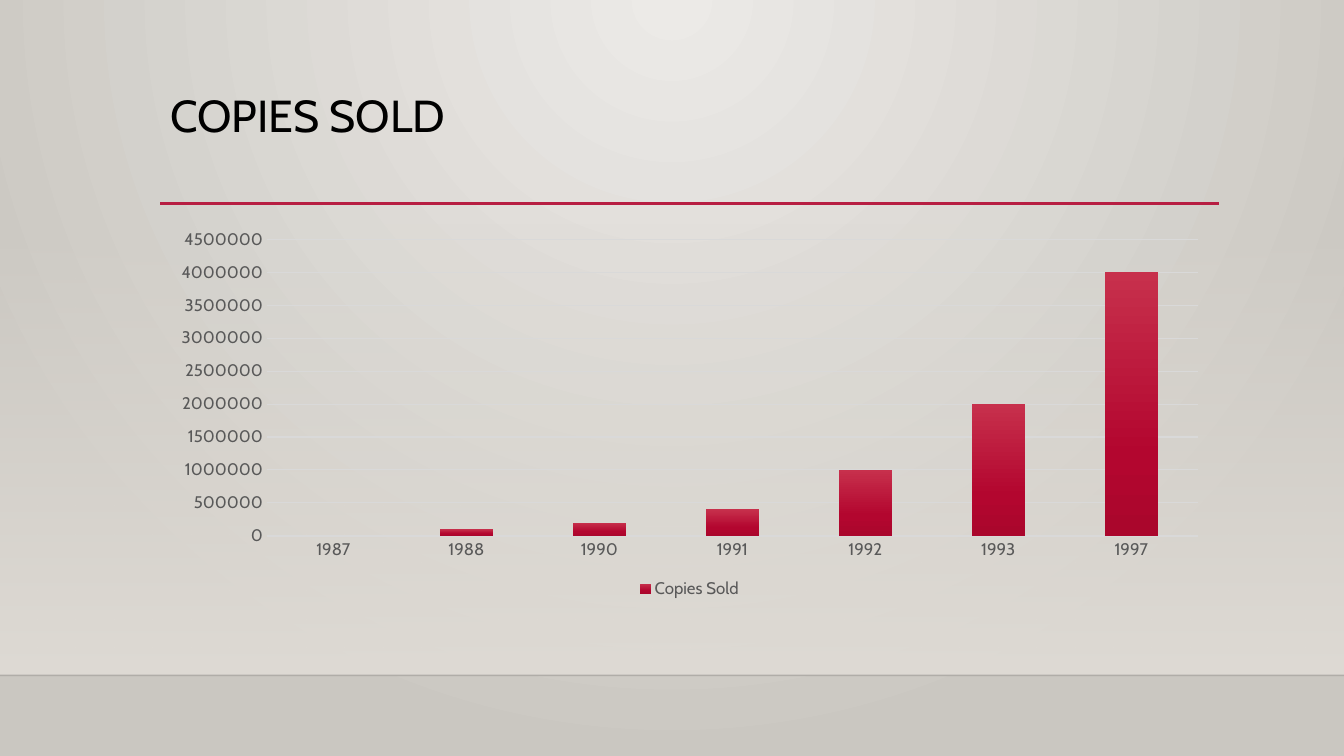
from lxml import etree
from pptx import Presentation, util as u
from pptx.chart.data import CategoryChartData
from pptx.dml.color import RGBColor
from pptx.enum import chart as ch, shapes, text
from pptx.oxml import ns, parse_xml

FONT = "Cabin"
BLACK = RGBColor(0x00, 0x00, 0x00)
GREY_TEXT = RGBColor(0x59, 0x59, 0x59)
GRID_GREY = RGBColor(0xD9, 0xD9, 0xD9)
CRIMSON = RGBColor(0xB7, 0x1E, 0x42)
BAR_TOP = RGBColor(0xC7, 0x30, 0x4C)
BAR_MIDDLE = RGBColor(0xB3, 0x06, 0x2F)
BAR_BASE = RGBColor(0xAA, 0x06, 0x2C)
WALL_LIGHT = RGBColor(0xEC, 0xEA, 0xE7)
WALL_DARK = RGBColor(0xCA, 0xC7, 0xC1)
HAZE = RGBColor(0xDF, 0xDB, 0xD5)

LEFT, WIDTH = 1.59, 10.5
# Copies sold by year, to the nearest hundred thousand
SALES = {
    "1987": 0,
    "1988": 100000,
    "1990": 200000,
    "1991": 400000,
    "1992": 1000000,
    "1993": 2000000,
    "1997": 4000000,
}

DOWNWARD = '<a:lin ang="5400000" scaled="0"/>'
FROM_TOP_CENTRE = ('<a:path path="circle"><a:fillToRect l="43000" t="0" '
                   'r="43000" b="100000"/></a:path>')


def set_gradient(fill, element, stops, direction):
    """Fill with (percent, colour, opacity percent) stops."""
    fill.solid()
    fill.fore_color.rgb = stops[0][1]
    solid = element.find(".//" + ns.qn("a:solidFill"))
    marks = "".join(
        f'<a:gs pos="{place * 1000}"><a:srgbClr val="{colour}">'
        f'<a:alpha val="{opacity * 1000}"/></a:srgbClr></a:gs>'
        for place, colour, opacity in stops)
    gradient = parse_xml(
        f'<a:gradFill {ns.nsdecls("a")} rotWithShape="1">'
        f'<a:gsLst>{marks}</a:gsLst>{direction}</a:gradFill>')
    solid.getparent().replace(solid, gradient)


def add_rule(page, left, right, top, colour, points, opacity=100):
    line = page.shapes.add_connector(
        shapes.MSO_CONNECTOR.STRAIGHT, u.Inches(left), u.Inches(top),
        u.Inches(right), u.Inches(top))
    line.line.color.rgb = colour
    line.line.width = u.Pt(points)
    properties = line._element.spPr
    if opacity < 100:
        tint = properties.find(".//" + ns.qn("a:srgbClr"))
        etree.SubElement(tint, ns.qn("a:alpha"), val=str(opacity * 1000))
    etree.SubElement(properties, ns.qn("a:effectLst"))


def add_haze(page):
    haze = page.shapes.add_shape(
        shapes.MSO_SHAPE.RECTANGLE, 0, u.Inches(2.21),
        u.Inches(13.33), u.Inches(4.49))
    haze.shadow.inherit = False
    haze.line.fill.background()
    set_gradient(haze.fill, haze._element,
                 [(0, HAZE, 0), (100, HAZE, 100)], DOWNWARD)


def add_title(page, wording):
    box = page.shapes.add_textbox(
        u.Inches(LEFT), u.Inches(0.88), u.Inches(WIDTH), u.Inches(1.15))
    frame = box.text_frame
    frame.word_wrap = True
    frame.vertical_anchor = text.MSO_ANCHOR.TOP
    para = frame.paragraphs[0]
    para.line_spacing = 0.9
    span = para.add_run()
    span.text = wording
    style_font(span.font, 32, BLACK)


def style_font(font, size, colour):
    font.name = FONT
    font.size = u.Pt(size)
    font.color.rgb = colour


def style_axis(axis):
    axis.major_tick_mark = ch.XL_TICK_MARK.NONE
    axis.minor_tick_mark = ch.XL_TICK_MARK.NONE
    style_font(axis.tick_labels.font, 12, GREY_TEXT)


def add_sales_chart(page):
    data = CategoryChartData()
    data.categories = list(SALES)
    data.add_series("Copies Sold", list(SALES.values()))
    chart = page.shapes.add_chart(
        ch.XL_CHART_TYPE.COLUMN_STACKED, u.Inches(LEFT), u.Inches(2.2),
        u.Inches(WIDTH), u.Inches(3.78), data).chart
    chart.has_title = False
    style_font(chart.font, 10, BLACK)

    # Axes
    years, copies = chart.category_axis, chart.value_axis
    style_axis(years)
    years.format.line.color.rgb = GRID_GREY
    years.format.line.width = u.Pt(1)
    style_axis(copies)
    copies.format.line.fill.background()
    copies.minimum_scale, copies.maximum_scale = 0, 4500000
    copies.major_unit = 500000
    copies.has_major_gridlines = True
    grid = copies.major_gridlines.format.line
    grid.color.rgb = GRID_GREY
    grid.width = u.Pt(0.75)

    # Legend
    chart.has_legend = True
    chart.legend.position = ch.XL_LEGEND_POSITION.BOTTOM
    chart.legend.include_in_layout = False
    style_font(chart.legend.font, 12, GREY_TEXT)

    # Columns
    plot = chart.plots[0]
    plot.vary_by_categories = False
    plot.gap_width = 150
    plot.overlap = 100
    columns = plot.series[0]
    set_gradient(columns.format.fill, columns._element,
                 [(0, BAR_TOP, 100), (69, BAR_MIDDLE, 100),
                  (100, BAR_BASE, 100)], DOWNWARD)


def main():
    deck = Presentation()
    deck.slide_width = u.Inches(13.33)
    deck.slide_height = u.Inches(7.5)
    page = deck.slides.add_slide(deck.slide_layouts[6])

    # Backdrop
    set_gradient(page.background.fill, page._element,
                 [(0, WALL_LIGHT, 100), (100, WALL_DARK, 100)],
                 FROM_TOP_CENTRE)
    add_haze(page)
    add_rule(page, 0, 13.33, 6.7, BLACK, 1, opacity=20)

    # Content
    add_rule(page, LEFT, LEFT + WIDTH, 2.02, CRIMSON, 2.5)
    add_title(page, "COPIES SOLD")
    add_sales_chart(page)
    deck.save("out.pptx")


if __name__ == "__main__":
    main()
